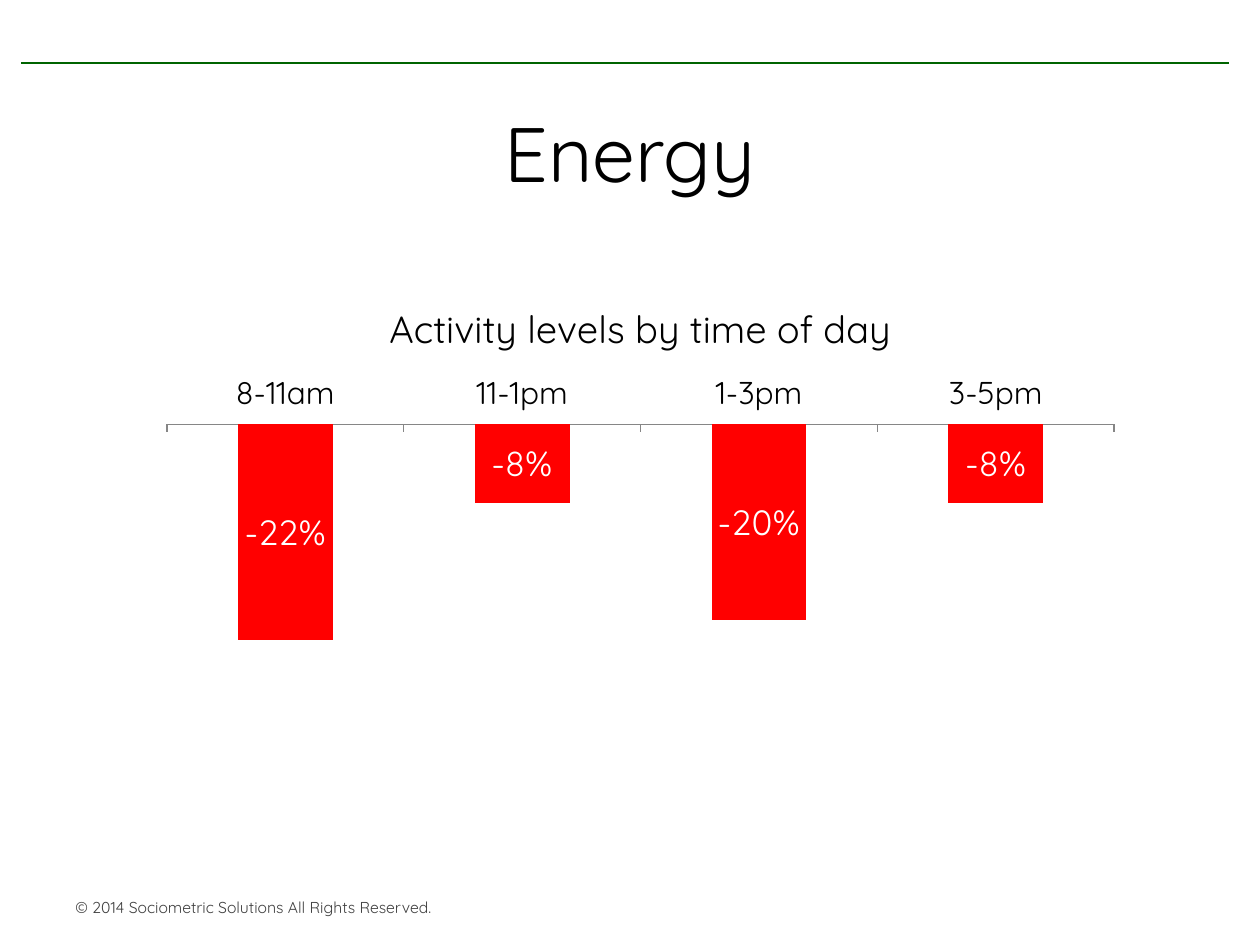
from dataclasses import dataclass

from lxml.etree import SubElement
from pptx import Presentation
from pptx.chart.data import CategoryChartData
from pptx.dml.color import RGBColor
from pptx.enum.chart import XL_CHART_TYPE as ChartType
from pptx.enum.chart import XL_LABEL_POSITION as LabelPosition
from pptx.enum.chart import XL_TICK_LABEL_POSITION as TickLabelPosition
from pptx.enum.chart import XL_TICK_MARK as TickMark
from pptx.enum.shapes import MSO_CONNECTOR as Connector
from pptx.enum.text import MSO_ANCHOR as Anchor
from pptx.enum.text import MSO_AUTO_SIZE as AutoSize
from pptx.enum.text import PP_ALIGN as Align
from pptx.oxml.ns import qn
from pptx.util import Cm, Pt

BLACK = RGBColor(0x00, 0x00, 0x00)
WHITE = RGBColor(0xFF, 0xFF, 0xFF)
RED = RGBColor(0xFF, 0x00, 0x00)
GREEN = RGBColor(0x00, 0x64, 0x00)
AXIS_GREY = RGBColor(0x86, 0x86, 0x86)
FOOTER_GREY = RGBColor(0x40, 0x40, 0x40)
FONT = "Quicksand"
TITLE_ONLY = 5


@dataclass
class Period:
    hours: str
    change: float


PERIODS = [
    Period("8-11am", -0.22),
    Period("11-1pm", -0.08),
    Period("1-3pm", -0.2),
    Period("3-5pm", -0.08),
]


def set_font(font, size: float, color: RGBColor) -> None:
    font.name = FONT
    font.size = Pt(size)
    font.bold = False
    font.color.rgb = color


def add_header_line(page) -> None:
    line = page.shapes.add_connector(Connector.STRAIGHT, Cm(0.43), Cm(1.27), Cm(24.77), Cm(1.27))
    line.line.color.rgb = GREEN
    line.line.width = Pt(1)
    SubElement(line.element.spPr, qn("a:effectLst"))


def add_footer(page, text: str) -> None:
    box = page.shapes.add_textbox(Cm(1.27), Cm(17.98), Cm(12.7), Cm(0.64))
    frame = box.text_frame
    frame.word_wrap = True
    frame.auto_size = AutoSize.SHAPE_TO_FIT_TEXT
    frame.text = text
    set_font(frame.paragraphs[0].font, 9, FOOTER_GREY)


def set_title(page, text: str) -> None:
    title = page.shapes.title
    title.left, title.top, title.width, title.height = Cm(1.27), Cm(1.47), Cm(22.86), Cm(3.18)
    title.text_frame.text = text
    title.text_frame.vertical_anchor = Anchor.MIDDLE
    para = title.text_frame.paragraphs[0]
    para.alignment = Align.CENTER
    set_font(para.font, 44, BLACK)


def place_plot(chart, x: float, y: float, w: float, h: float) -> None:
    """Fix the inner plot area, in fractions of the chart."""
    plot_area = chart.element.chart.plotArea
    for old in plot_area.findall(qn("c:layout")):
        plot_area.remove(old)
    layout = SubElement(plot_area, qn("c:layout"))
    plot_area.insert(0, layout)
    manual = SubElement(layout, qn("c:manualLayout"))
    settings = {"layoutTarget": "inner", "xMode": "edge", "yMode": "edge",
                "x": x, "y": y, "w": w, "h": h}
    for name, value in settings.items():
        SubElement(manual, qn(f"c:{name}")).set("val", str(value))


def add_activity_chart(page, heading: str, periods: list[Period]) -> None:
    data = CategoryChartData(number_format="0%")
    data.categories = [period.hours for period in periods]
    data.add_series("Series 1", [period.change for period in periods])
    chart = page.shapes.add_chart(
        ChartType.COLUMN_CLUSTERED, Cm(2.97), Cm(5.64), Cm(19.89), Cm(8.1), data).chart
    chart.font.name = "Calibri"
    chart.font.size = Pt(18)
    chart.font.color.rgb = BLACK
    chart.has_legend = False
    chart.has_title = True
    chart.chart_title.include_in_layout = False
    chart.chart_title.text_frame.text = heading
    set_font(chart.chart_title.text_frame.paragraphs[0].font, 21.6, BLACK)
    place_plot(chart, 0.02, 0.36, 0.96, 0.61)

    hours_axis = chart.category_axis
    hours_axis.tick_label_position = TickLabelPosition.HIGH
    hours_axis.major_tick_mark = TickMark.OUTSIDE
    hours_axis.format.line.color.rgb = AXIS_GREY
    hours_axis.format.line.width = Pt(0.75)
    set_font(hours_axis.tick_labels.font, 18, BLACK)

    change_axis = chart.value_axis
    change_axis.visible = False
    change_axis.has_major_gridlines = False
    change_axis.minimum_scale = -0.25
    change_axis.maximum_scale = 0

    plot = chart.plots[0]
    plot.gap_width = 150
    plot.vary_by_categories = False
    series = plot.series[0]
    series.invert_if_negative = False
    series.format.fill.solid()
    series.format.fill.fore_color.rgb = RED
    labels = series.data_labels
    labels.show_value = True
    labels.position = LabelPosition.CENTER
    labels.number_format = "0%"
    labels.number_format_is_linked = False
    set_font(labels.font, 20, WHITE)


def main() -> None:
    deck = Presentation()
    deck.slide_width, deck.slide_height = Cm(25.4), Cm(19.05)
    page = deck.slides.add_slide(deck.slide_layouts[TITLE_ONLY])
    add_header_line(page)
    add_footer(page, "© 2014 Sociometric Solutions All Rights Reserved.")
    set_title(page, "Energy")
    add_activity_chart(page, "Activity levels by time of day", PERIODS)
    deck.save("out.pptx")


if __name__ == "__main__":
    main()
